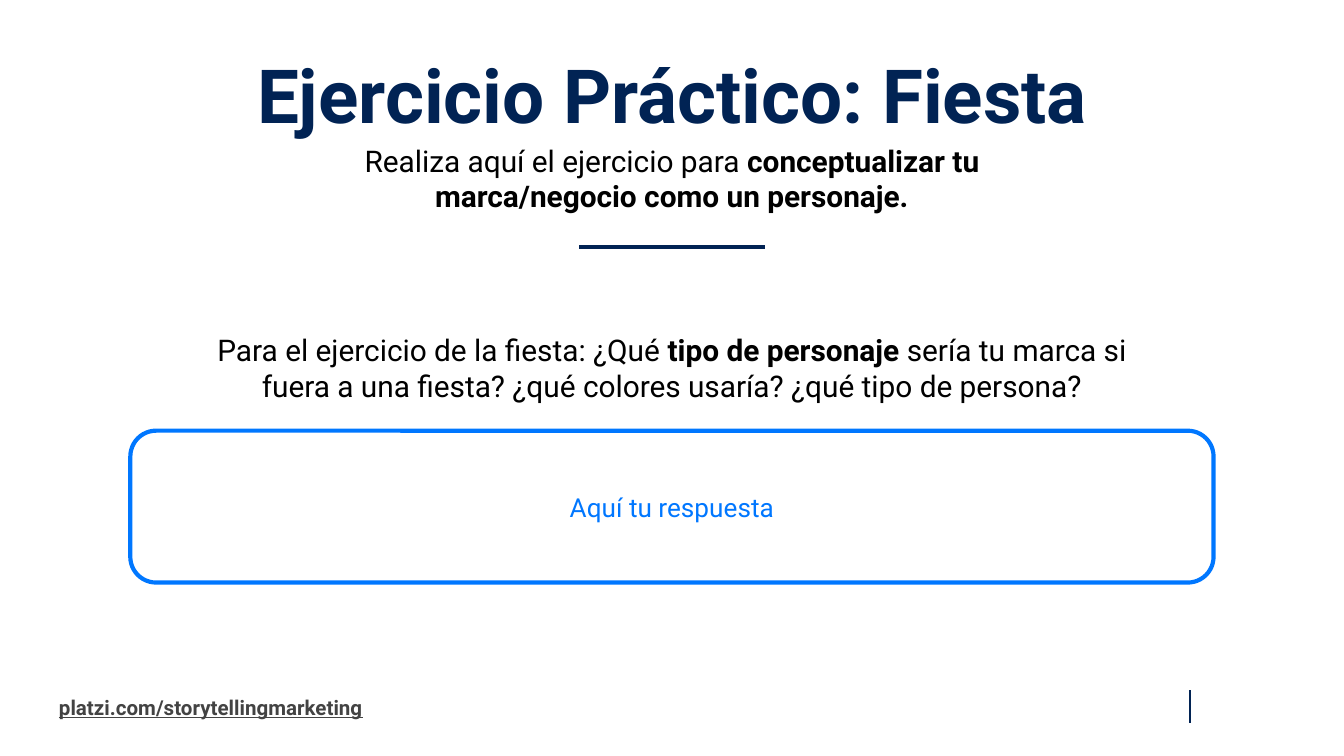
import pptx
import pptx.dml.color
import pptx.enum.shapes
import pptx.enum.text
import pptx.oxml.ns
import pptx.util
from lxml import etree

PX = 4572
NAVY, BLUE, BLACK, GRAY = "012354", "0077FF", "000000", "434343"
ALIGN = pptx.enum.text.PP_ALIGN
ANCHOR = pptx.enum.text.MSO_ANCHOR


def px(*lengths):
    """Turn px lengths into EMU."""
    return [pptx.util.Emu(n * PX) for n in lengths]


def rgb(value):
    """Return a colour from a hex string."""
    return pptx.dml.color.RGBColor.from_string(value)


def write(sp, lines, size, color, align=ALIGN.CENTER, anchor=ANCHOR.MIDDLE):
    """Fill a shape with lines, each a list of (text, bold) runs."""
    tf = sp.text_frame
    tf.word_wrap = True
    tf.vertical_anchor = anchor
    tf.margin_left, tf.margin_top, tf.margin_right, tf.margin_bottom = px(20, 20, 20, 20)
    for i, line in enumerate(lines):
        p = tf.add_paragraph() if i else tf.paragraphs[0]
        p.alignment = align
        p.font.name = "Roboto"
        p.font.size = pptx.util.Pt(size)
        p.font.color.rgb = rgb(color)
        for text, bold in line:
            r = p.add_run()
            r.text = text
            r.font.bold = bold
    return tf


def add_text(s, box, lines, size, color, **layout):
    """Add a text box and return its text frame."""
    return write(s.shapes.add_textbox(*px(*box)), lines, size, color, **layout)


def add_line(s, ends, width):
    """Add a straight navy line."""
    sp = s.shapes.add_connector(pptx.enum.shapes.MSO_CONNECTOR.STRAIGHT, *px(*ends))
    sp.line.color.rgb = rgb(NAVY)
    sp.line.width = pptx.util.Pt(width)
    etree.SubElement(sp._element.spPr, pptx.oxml.ns.qn("a:effectLst"))


def add_answer_box(s, box, text):
    """Add the rounded outline that holds the answer."""
    sp = s.shapes.add_shape(pptx.enum.shapes.MSO_SHAPE.ROUNDED_RECTANGLE, *px(*box))
    sp.adjustments[0] = 0.17
    sp.shadow.inherit = False
    sp.fill.background()
    sp.line.color.rgb = rgb(BLUE)
    sp.line.width = pptx.util.Pt(2.25)
    write(sp, [[(text, False)]], 14, BLUE)


def main():
    """Build the exercise slide."""
    prs = pptx.Presentation()
    prs.slide_width, prs.slide_height = px(2000, 1125)
    s = prs.slides.add_slide(prs.slide_layouts[6])

    tf = add_text(s, (68, 1018, 622, 68), [[("platzi.com/storytellingmarketing", True)]],
                  11, GRAY, align=ALIGN.LEFT)
    tf.paragraphs[0].font.underline = True
    add_line(s, (1771, 1027, 1771, 1076), 1.5)

    tf = add_text(s, (68, 78, 1864, 126), [[("Ejercicio Práctico: Fiesta", True)]],
                  40, NAVY, anchor=ANCHOR.TOP)
    tf.paragraphs[0].line_spacing = 0.8

    add_text(s, (264, 495, 1472, 104), [
        [("Para el ejercicio de la fiesta: ¿Qué ", False),
         ("tipo de personaje ", True),
         ("sería tu marca si", False)],
        [("fuera a una fiesta? ¿qué colores usaría? ¿qué tipo de persona?", False)],
    ], 16, BLACK)
    add_answer_box(s, (194, 641, 1612, 226), "Aquí tu respuesta")

    add_text(s, (514, 213, 972, 104), [[
        ("Realiza aquí el ejercicio para ", False),
        ("conceptualizar tu marca/negocio como un personaje.", True),
    ]], 16, BLACK)
    add_line(s, (862, 368, 1138, 368), 2.25)

    prs.save("out.pptx")


if __name__ == "__main__":
    main()
